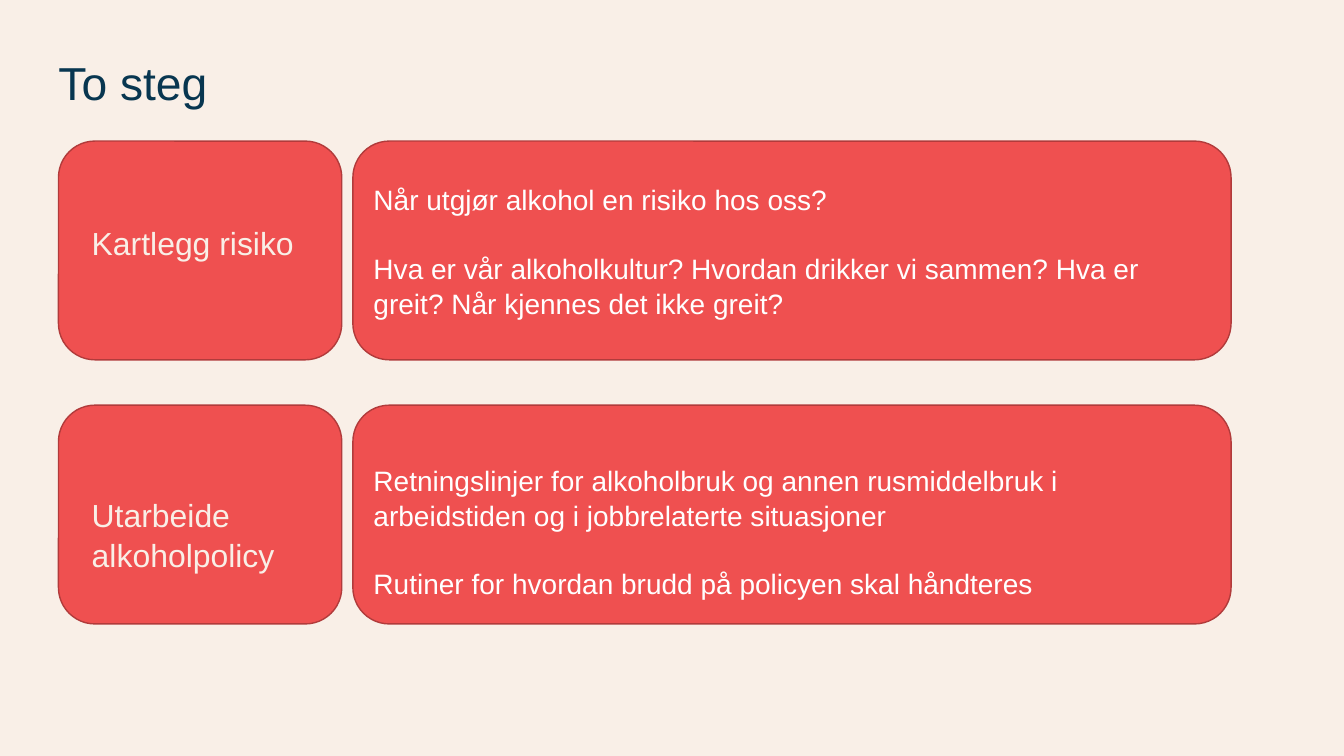
from pptx import Presentation
from pptx.dml.color import RGBColor
from pptx.enum.shapes import MSO_SHAPE
from pptx.enum.text import MSO_ANCHOR, MSO_AUTO_SIZE, PP_ALIGN
from pptx.oxml.ns import qn
from pptx.util import Inches, Pt

ROUNDED = MSO_SHAPE.ROUNDED_RECTANGLE
TOP, MIDDLE = MSO_ANCHOR.TOP, MSO_ANCHOR.MIDDLE
LEFT = PP_ALIGN.LEFT
NO_AUTOFIT = MSO_AUTO_SIZE.NONE

TITLE = "To steg"
STEPS = [
    {
        "label": "Kartlegg risiko",
        "label_offset": 0.8,
        "text_inset": 0.05,
        "details": [
            "Når utgjør alkohol en risiko hos oss?",
            "Hva er vår alkoholkultur? Hvordan drikker vi sammen? "
            "Hva er greit? Når kjennes det ikke greit?",
        ],
    },
    {
        "label": "Utarbeide alkoholpolicy",
        "label_offset": 0.87,
        "text_inset": 0.38,
        "details": [
            "Retningslinjer for alkoholbruk og annen rusmiddelbruk i "
            "arbeidstiden og i jobbrelaterte situasjoner",
            "Rutiner for hvordan brudd på policyen skal håndteres",
        ],
    },
]
COLORS = {
    "cream": "F9EFE7",
    "navy": "083650",
    "red": "EF5050",
    "dark_red": "B13B3B",
    "white": "FFFFFF",
}
FONT = "Arial"

MARGIN = 0.58
FIRST_ROW, ROW_STEP, ROW_HEIGHT = 1.4, 2.62, 2.17
LABEL_WIDTH = 2.81
DETAIL_LEFT, DETAIL_WIDTH = 3.5, 8.71


def color(name):
    return RGBColor.from_string(COLORS[name])


def place(shape, left, top, width, height):
    shape.left, shape.top = Inches(left), Inches(top)
    shape.width, shape.height = Inches(width), Inches(height)


def write(shape, lines, size, fill, spacing, anchor=TOP, gap=0, inset=0, inset_top=0):
    """Fill a shape with left-aligned paragraphs, gap points apart."""
    frame = shape.text_frame
    frame.word_wrap = True
    frame.auto_size = NO_AUTOFIT
    frame.vertical_anchor = anchor
    frame.margin_left = frame.margin_right = Inches(inset)
    frame.margin_top = Inches(inset_top)
    frame.margin_bottom = Inches(inset / 2)
    for index, line in enumerate(lines):
        para = frame.add_paragraph() if index else frame.paragraphs[0]
        properties = para._p.get_or_add_pPr()
        properties.set("marL", "0")
        properties.set("indent", "0")
        properties.append(properties.makeelement(qn("a:buNone"), {}))
        para.alignment = LEFT
        para.line_spacing = spacing
        para.space_before = Pt(gap if index else 0)
        span = para.add_run()
        span.text = line
        span.font.name = FONT
        span.font.size = Pt(size)
        span.font.color.rgb = color(fill)


def add_card(page, left, top, width):
    card = page.shapes.add_shape(
        ROUNDED, Inches(left), Inches(top), Inches(width), Inches(ROW_HEIGHT)
    )
    card.shadow.inherit = False
    card.fill.solid()
    card.fill.fore_color.rgb = color("red")
    card.line.color.rgb = color("dark_red")
    card.line.width = Pt(1)
    return card


def main():
    deck = Presentation()
    deck.slide_width, deck.slide_height = Inches(13.33), Inches(7.5)
    page = deck.slides.add_slide(deck.slide_layouts[1])
    page.background.fill.solid()
    page.background.fill.fore_color.rgb = color("cream")

    place(page.shapes.title, MARGIN, 0.48, 12.18, 1.11)
    write(page.shapes.title, [TITLE], 33, "navy", 1.1)

    body = page.placeholders[1]
    for row, step in enumerate(STEPS):
        top = FIRST_ROW + row * ROW_STEP
        add_card(page, MARGIN, top, LABEL_WIDTH)
        detail = add_card(page, DETAIL_LEFT, top, DETAIL_WIDTH)
        write(detail, step["details"], 20, "white", 1.04, anchor=MIDDLE,
              gap=24, inset=0.1, inset_top=step["text_inset"])

        label = page.shapes.add_textbox(0, 0, 0, 0) if row else body
        page.shapes._spTree.append(label._element)  # labels lie above their cards
        place(label, 0.91, top + step["label_offset"], 2.72, 0.92)
        write(label, [step["label"]], 22.8, "cream", 1.06)

    deck.save("out.pptx")


if __name__ == "__main__":
    main()
